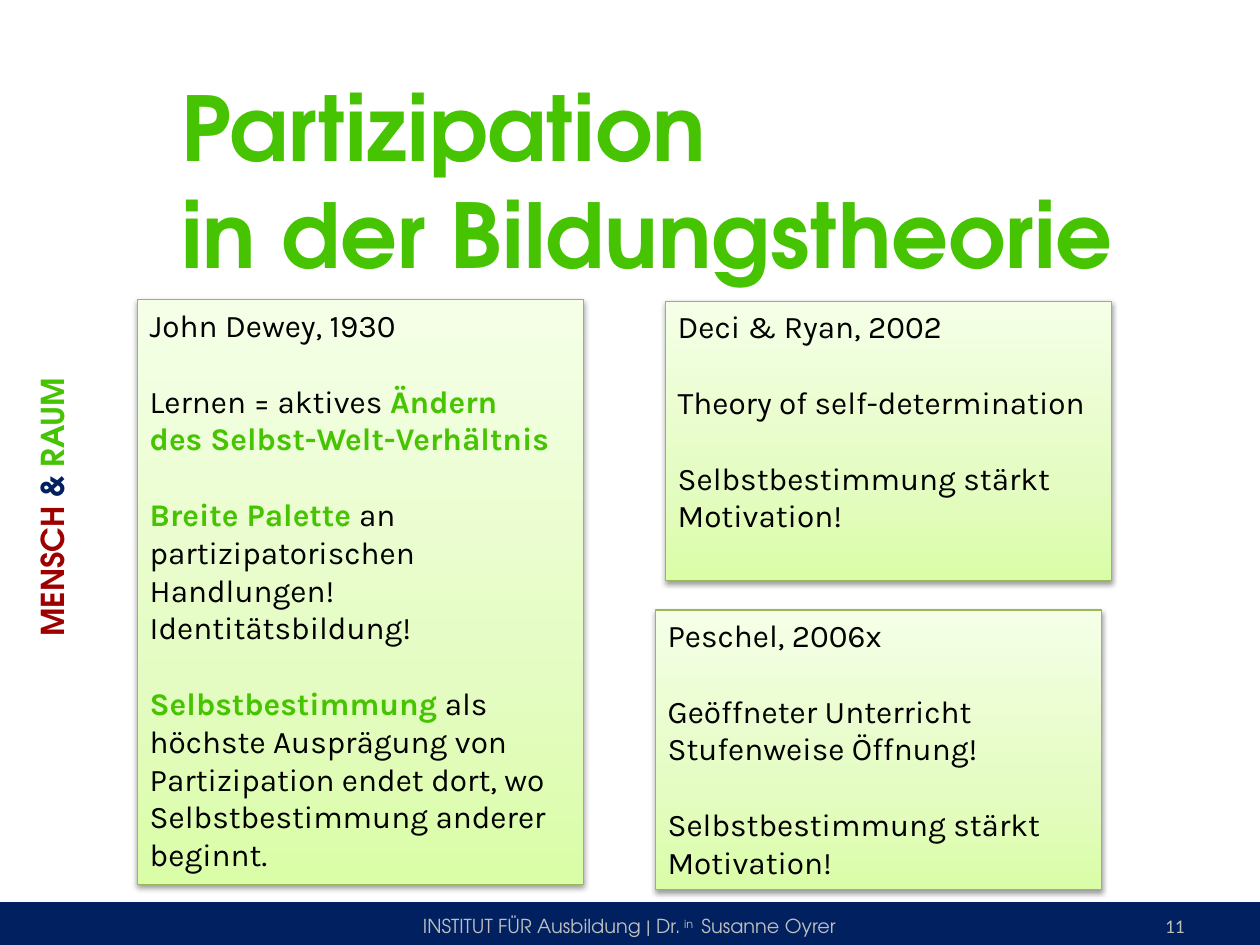
from copy import deepcopy
from lxml import etree
from pptx import Presentation
from pptx.dml.color import RGBColor
from pptx.enum.shapes import MSO_SHAPE
from pptx.enum.text import MSO_ANCHOR, MSO_AUTO_SIZE, PP_ALIGN
from pptx.oxml.ns import qn
from pptx.util import Inches, Pt

RECT = MSO_SHAPE.RECTANGLE
LEFT, CENTER, RIGHT = PP_ALIGN.LEFT, PP_ALIGN.CENTER, PP_ALIGN.RIGHT
TOP, MIDDLE = MSO_ANCHOR.TOP, MSO_ANCHOR.MIDDLE
NO_FIT = MSO_AUTO_SIZE.NONE

COLORS = {
    "green": "46C301", "navy": "002060", "red": "9E0000", "black": "000000",
    "grey": "BFBFBF", "border": "98B955",
}
CARD_STOPS = [(0, "DAFDA7"), (0.35, "E4FCC2"), (1, "F5FFE7")]
HEAD_FONT, CARD_FONT, NUMBER_FONT = "TeX Gyre Adventor", "Karla", "Calibri"
CARD_SIZE, CARD_GAP = 18, 21.6

CARDS = [
    ((1.09, 2.38, 3.54, 4.64), [
        [[("John Dewey, 1930", "black")]],
        [[("Lernen = aktives ", "black"), ("Ändern", "green")],
         [("des Selbst-Welt-Verhältnis", "green")]],
        [[("Breite Palette ", "green"),
          ("an partizipatorischen Handlungen! Identitätsbildung!", "black")]],
        [[("Selbstbestimmung", "green"),
          (" als höchste Ausprägung von Partizipation endet dort, wo "
           "Selbstbestimmung anderer beginnt.", "black")]],
    ]),
    ((5.28, 2.39, 3.54, 2.22), [
        [[("Deci & Ryan, 2002", "black")]],
        [[("Theory of self-determination", "black")]],
        [[("Selbstbestimmung stärkt Motivation!", "black")]],
    ]),
    ((5.2, 4.84, 3.54, 2.22), [
        [[("Peschel, 2006x", "black")]],
        [[("Geöffneter Unterricht", "black")],
         [("Stufenweise Öffnung!", "black")]],
        [[("Selbstbestimmung stärkt Motivation!", "black")]],
    ]),
]


def rgb(name):
    """Return the colour stored under a name."""
    return RGBColor.from_string(COLORS[name])


def add_run(p, text, font, size, color, bold=False):
    """Append one formatted run to a paragraph."""
    r = p.add_run()
    r.text = text
    r.font.name, r.font.size, r.font.bold = font, Pt(size), bold
    r.font.color.rgb = rgb(color)
    return r


def add_label(s, box, align, anchor=TOP):
    """Add a wrapping text box and return it with its first paragraph."""
    sp = s.shapes.add_textbox(*map(Inches, box))
    tf = sp.text_frame
    tf.word_wrap, tf.vertical_anchor = True, anchor
    p = tf.paragraphs[0]
    p.alignment = align
    return sp, p


def add_title(s, box, lines):
    """Place and format the title placeholder."""
    sp = s.shapes.title
    sp.left, sp.top, sp.width, sp.height = map(Inches, box)
    tf = sp.text_frame
    tf.word_wrap, tf.auto_size, tf.vertical_anchor = False, NO_FIT, TOP
    for i, line in enumerate(lines):
        p = tf.add_paragraph() if i else tf.paragraphs[0]
        p.alignment = LEFT
        add_run(p, line, HEAD_FONT, 51, "green", True)


def add_motto(s, box):
    """Add the vertical three-coloured motto."""
    sp, p = add_label(s, box, CENTER, MIDDLE)
    sp.rotation = 270
    for text, color in (("MENSCH ", "red"), ("& ", "navy"), ("RAUM", "green")):
        add_run(p, text, HEAD_FONT, 18, color, True)


def add_footer(s, box):
    """Add the footer bar with the institute line and the page number."""
    x, y, w, h = box
    bar = s.shapes.add_shape(RECT, *map(Inches, box))
    bar.shadow.inherit = False
    bar.fill.solid()
    bar.fill.fore_color.rgb = rgb("navy")
    bar.line.fill.background()
    p = add_label(s, (x + 2.95, y + 0.05, 4.09, 0.29), CENTER)[1]
    add_run(p, "INSTITUT FÜR Ausbildung | Dr.", HEAD_FONT, 11, "grey")
    r = add_run(p, " in ", HEAD_FONT, 11, "grey")
    r.font._element.set("baseline", "30000")
    add_run(p, " Susanne Oyrer", HEAD_FONT, 11, "grey")
    p = add_label(s, (x + w - 2.83, y + 0.05, 2.33, 0.29), RIGHT)[1]
    add_run(p, "11", NUMBER_FONT, 11, "grey")


def style_card(sp):
    """Give a card its gradient, border and soft shadow."""
    sp.fill.gradient()
    stop_list = sp._element.spPr.find(".//" + qn("a:gsLst"))
    stop_list.insert(1, deepcopy(stop_list[0]))
    for stop, (position, color) in zip(sp.fill.gradient_stops, CARD_STOPS):
        stop.position = position
        stop.color.rgb = RGBColor.from_string(color)
    sp.fill.gradient_angle = 90
    sp.line.color.rgb = rgb("border")
    sp.line.width = Pt(0.75)
    sp.shadow.inherit = False
    effects = sp._element.spPr.find(qn("a:effectLst"))
    shadow = etree.SubElement(
        effects, qn("a:outerShdw"), blurRad=str(Pt(3.1)), dist=str(Pt(1.6)),
        dir="5400000", rotWithShape="0")
    color = etree.SubElement(shadow, qn("a:srgbClr"), val=COLORS["black"])
    etree.SubElement(color, qn("a:alpha"), val="38000")


def add_card(s, box, groups):
    """Add a card whose groups of paragraphs stand one line apart."""
    sp = s.shapes.add_shape(RECT, *map(Inches, box))
    style_card(sp)
    tf = sp.text_frame
    tf.word_wrap, tf.vertical_anchor = True, TOP
    for g, group in enumerate(groups):
        for i, runs in enumerate(group):
            p = tf.add_paragraph() if g or i else tf.paragraphs[0]
            p.alignment = LEFT
            if g and not i:
                p.space_before = Pt(CARD_GAP)
            for text, color in runs:
                add_run(p, text, CARD_FONT, CARD_SIZE, color, color == "green")


def main():
    """Build and save the slide."""
    prs = Presentation()
    prs.slide_width, prs.slide_height = Inches(10), Inches(7.5)
    s = prs.slides.add_slide(prs.slide_layouts[5])
    add_footer(s, (0, 7.16, 10, 0.34))
    add_title(s, (1.34, 0.52, 7.65, 1.82),
              ["Partizipation", "in der Bildungstheorie"])
    add_motto(s, (-2.22, 3.69, 5.26, 0.67))
    for box, groups in CARDS:
        add_card(s, box, groups)
    prs.save("out.pptx")


if __name__ == "__main__":
    main()
